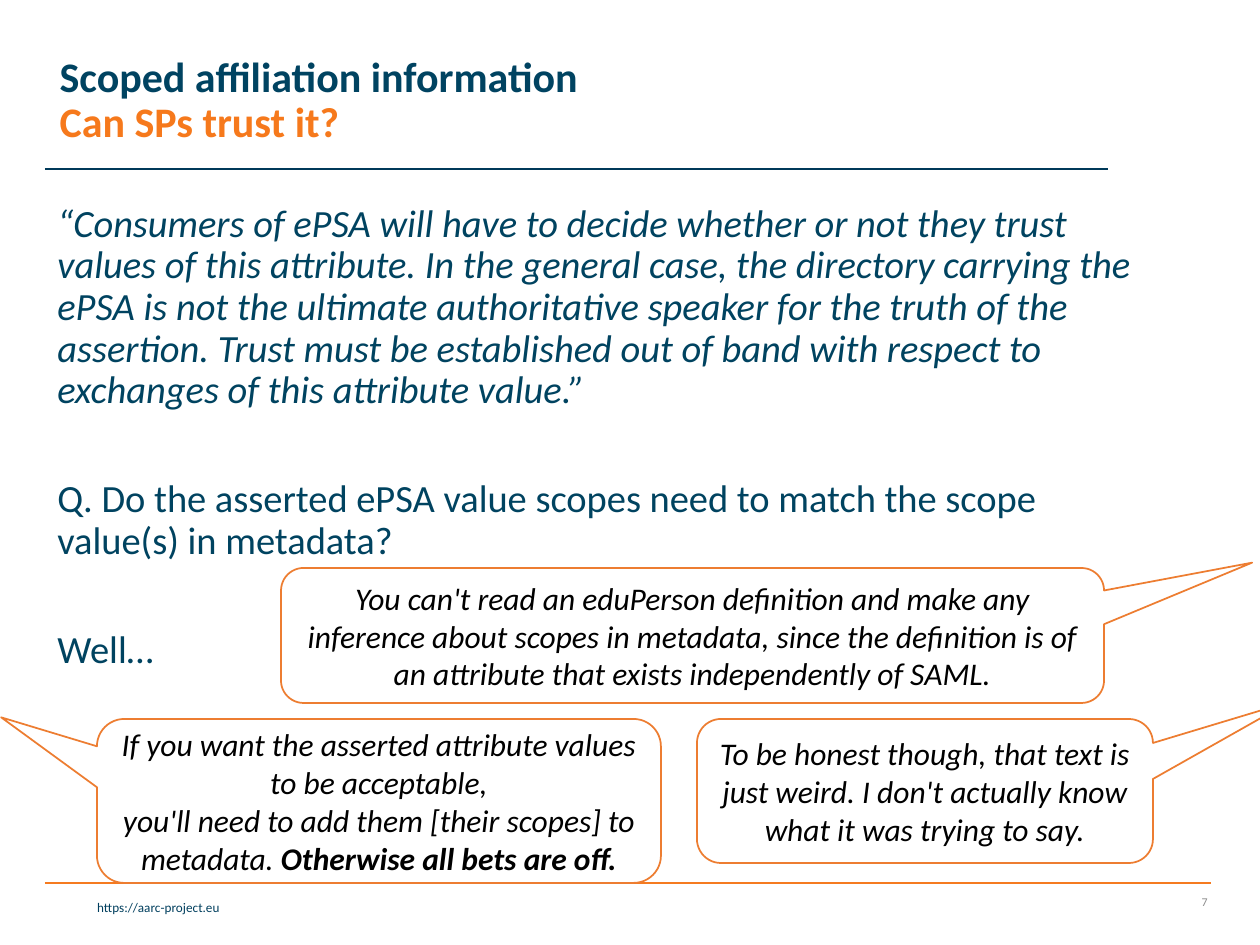
from typing import NamedTuple

from lxml import etree
from pptx import Presentation
from pptx import util as u
from pptx.dml.color import RGBColor
from pptx.enum import shapes, text
from pptx.oxml.ns import qn

PX = 914400 / 126
FONT = "Calibri"
COLORS = {
    "heading": "004361",
    "accent": "F6791C",
    "body": "004360",
    "header_rule": "003959",
    "footer_rule": "F57B20",
    "footer": "003F5E",
    "number": "8C8C8C",
    "callout_line": "ED7D31",
    "white": "FFFFFF",
    "black": "000000",
}


class Box(NamedTuple):
    left: int
    top: int
    width: int
    height: int

    def emu(self) -> list[u.Emu]:
        return [px(value) for value in self]


class Run(NamedTuple):
    words: str
    size: float
    color: str
    bold: bool = False
    italic: bool = False


class Callout(NamedTuple):
    box: Box
    tip: tuple[float, float]
    runs: list[Run]


def px(value: float) -> u.Emu:
    return u.Emu(round(value * PX))


def rgb(name: str) -> RGBColor:
    return RGBColor.from_string(COLORS[name])


def add_runs(paragraph, runs: list[Run]) -> None:
    """Add styled runs; a newline in the words becomes a line break."""
    for item in runs:
        for index, line in enumerate(item.words.split("\n")):
            if index:
                paragraph.add_line_break()
            if not line:
                continue
            run = paragraph.add_run()
            run.text = line
            run.font.name = FONT
            run.font.size = u.Pt(item.size)
            run.font.bold = item.bold
            run.font.italic = item.italic
            run.font.color.rgb = rgb(item.color)


def add_rule(slide, left: int, right: int, y: int, color: str) -> None:
    rule = slide.shapes.add_connector(
        shapes.MSO_CONNECTOR.STRAIGHT, px(left), px(y), px(right), px(y))
    rule.line.color.rgb = rgb(color)
    rule.line.width = u.Pt(1)
    etree.SubElement(rule._element.spPr, qn("a:effectLst"))


def add_text(slide, box: Box, paragraphs: list[Run], align=text.PP_ALIGN.LEFT,
             anchor=text.MSO_ANCHOR.TOP, spacing: float = 1, gap: float = 0) -> None:
    frame = slide.shapes.add_textbox(*box.emu()).text_frame
    frame.word_wrap = True
    frame.vertical_anchor = anchor
    for index, item in enumerate(paragraphs):
        paragraph = frame.add_paragraph() if index else frame.paragraphs[0]
        paragraph.alignment = align
        paragraph.line_spacing = spacing
        if index:
            paragraph.space_before = u.Pt(gap)
        add_runs(paragraph, [item])


def add_callout(slide, callout: Callout) -> None:
    bubble = slide.shapes.add_shape(
        shapes.MSO_SHAPE.ROUNDED_RECTANGULAR_CALLOUT, *callout.box.emu())
    bubble.shadow.inherit = False
    bubble.adjustments[0], bubble.adjustments[1] = callout.tip
    bubble.fill.solid()
    bubble.fill.fore_color.rgb = rgb("white")
    bubble.line.color.rgb = rgb("callout_line")
    bubble.line.width = u.Pt(1)
    bubble.text_frame.word_wrap = True
    bubble.text_frame.vertical_anchor = text.MSO_ANCHOR.MIDDLE
    paragraph = bubble.text_frame.paragraphs[0]
    paragraph.alignment = text.PP_ALIGN.CENTER
    add_runs(paragraph, callout.runs)


def set_title(slide, box: Box, runs: list[Run]) -> None:
    title = slide.shapes.title
    title.left, title.top, title.width, title.height = box.emu()
    frame = title.text_frame
    frame.auto_size = text.MSO_AUTO_SIZE.NONE
    frame.vertical_anchor = text.MSO_ANCHOR.MIDDLE
    paragraph = frame.paragraphs[0]
    paragraph.alignment = text.PP_ALIGN.LEFT
    paragraph.line_spacing = 0.9
    add_runs(paragraph, runs)


def quote(words: str, bold: bool = False) -> Run:
    return Run(words, 18, "black", bold, italic=True)


BODY = [
    Run("“Consumers of ePSA will have to decide whether or not they trust values of "
        "this attribute. In the general case, the directory carrying the ePSA is not "
        "the ultimate authoritative speaker for the truth of the assertion. Trust must "
        "be established out of band with respect to exchanges of this attribute value.”",
        22, "body", italic=True),
    Run("Q. Do the asserted ePSA value scopes need to match the scope value(s) in "
        "metadata?", 22, "body"),
    Run("Well…", 22, "body"),
]
CALLOUTS = [
    Callout(Box(281, 568, 823, 135), (0.68, -0.54), [
        quote("You can't read an eduPerson definition and make any inference about "
              "scopes in metadata, since the definition is of an attribute that exists "
              "independently of SAML.")]),
    Callout(Box(697, 719, 456, 144), (0.8, -0.62), [
        quote("To be honest though, that text is just weird. I don't actually know "
              "what it was trying to say.")]),
    Callout(Box(97, 719, 564, 164), (-0.67, -0.51), [
        quote("If you want the asserted attribute values to be acceptable,\n"
              "you'll need to add them [their scopes] to metadata. "),
        quote("Otherwise all bets are off.", bold=True)]),
]


def main() -> None:
    deck = Presentation()
    deck.slide_width, deck.slide_height = px(1260), px(945)
    slide = deck.slides.add_slide(deck.slide_layouts[5])

    set_title(slide, Box(47, 10, 993, 183), [
        Run("Scoped affiliation information\n", 24, "heading", bold=True),
        Run("Can SPs trust it?", 24, "accent", bold=True)])
    add_rule(slide, 45, 1211, 883, "footer_rule")
    add_rule(slide, 45, 1108, 169, "header_rule")
    add_text(slide, Box(44, 893, 188, 29),
             [Run("https://aarc-project.eu", 7.5, "footer")], text.PP_ALIGN.RIGHT)
    add_text(slide, Box(45, 198, 1128, 653), BODY, spacing=0.9, gap=38.5)
    add_text(slide, Box(1143, 883, 77, 38), [Run("7", 6.8, "number")],
             text.PP_ALIGN.RIGHT, text.MSO_ANCHOR.MIDDLE)
    for callout in CALLOUTS:
        add_callout(slide, callout)
    deck.save("out.pptx")


if __name__ == "__main__":
    main()
